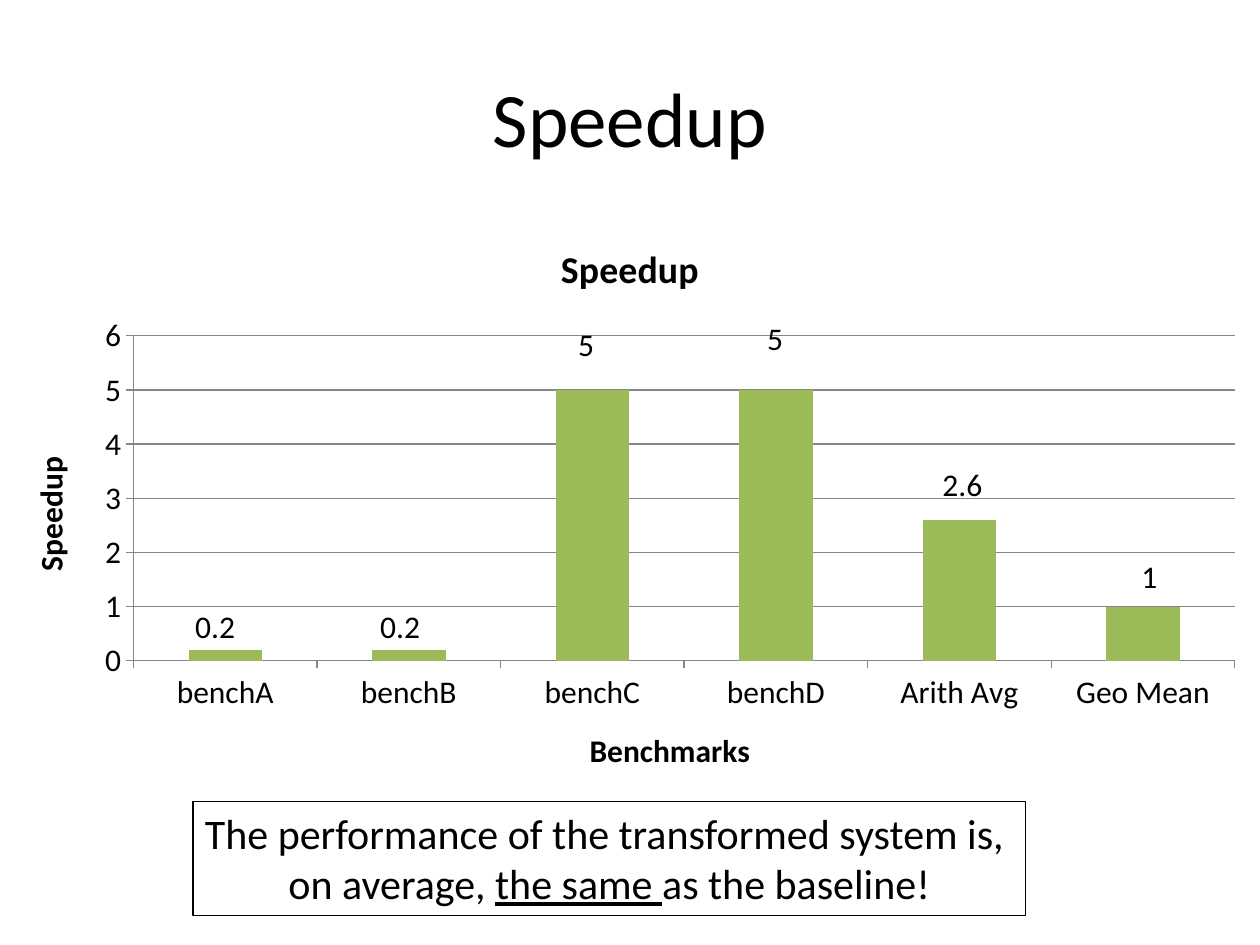
from lxml import etree
from pptx import Presentation
from pptx.chart.data import CategoryChartData
from pptx.dml.color import RGBColor
from pptx.enum.chart import XL_CHART_TYPE as ChartType, XL_TICK_MARK as TickMark
from pptx.enum.shapes import MSO_SHAPE as Shape
from pptx.enum.text import MSO_ANCHOR as Anchor, PP_ALIGN as Align
from pptx.oxml.ns import qn
from pptx.util import Pt

FONT = "Calibri"
COLORS = {"text": "000000", "paper": "FFFFFF", "bar": "9BBB59", "axis": "868686"}
SPEEDUPS = {"benchA": 0.2, "benchB": 0.2, "benchC": 5, "benchD": 5,
            "Arith Avg": 2.6, "Geo Mean": 1}
LABEL_PLACES = [(104.4, 343.4), (210.2, 343.4), (323.3, 182.2),
                (431.3, 178.6), (531.4, 262.1), (645.1, 314.6)]
PLOT_AREA = {"x": 0.106, "y": 0.204, "w": 0.874, "h": 0.556}


def color(name):
    return RGBColor.from_string(COLORS[name])


def style_font(font, size, bold=False):
    font.name, font.size, font.bold = FONT, Pt(size), bold
    font.color.rgb = color("text")


def write(shape, *lines, size=18, align=Align.LEFT, anchor=Anchor.TOP, wrap=False):
    """Fill a shape with lines, each a list of (text, underlined) runs."""
    frame = shape.text_frame
    frame.word_wrap, frame.vertical_anchor = wrap, anchor
    for index, line in enumerate(lines):
        paragraph = frame.add_paragraph() if index else frame.paragraphs[0]
        paragraph.alignment = align
        for text, underlined in line:
            run = paragraph.add_run()
            run.text = text
            style_font(run.font, size)
            run.font.underline = underlined


def add_text(slide, text, left, top, width, height, **text_format):
    box = slide.shapes.add_textbox(Pt(left), Pt(top), Pt(width), Pt(height))
    write(box, [(text, False)], **text_format)


def set_title(owner, text, size):
    """Title a chart or an axis."""
    frame = (owner.chart_title if hasattr(owner, "chart_title") else owner.axis_title).text_frame
    frame.text = text
    style_font(frame.paragraphs[0].runs[0].font, size, bold=True)


def style_line(line):
    line.color.rgb = color("axis")
    line.width = Pt(0.75)


def place_plot(chart):
    """Fix the inner plot area as fractions of the chart."""
    plot_area = chart.element.find(f".//{qn('c:plotArea')}")
    for old_layout in plot_area.findall(qn("c:layout")):
        plot_area.remove(old_layout)
    layout = etree.Element(qn("c:layout"))
    manual = etree.SubElement(layout, qn("c:manualLayout"))
    settings = {"layoutTarget": "inner", "xMode": "edge", "yMode": "edge", **PLOT_AREA}
    for name, value in settings.items():
        etree.SubElement(manual, qn(f"c:{name}")).set("val", str(value))
    plot_area.insert(0, layout)


def add_speedup_chart(slide):
    data = CategoryChartData()
    data.categories = list(SPEEDUPS)
    data.add_series("Speedup", list(SPEEDUPS.values()))
    chart = slide.shapes.add_chart(
        ChartType.COLUMN_CLUSTERED, Pt(0), Pt(123.8), Pt(720), Pt(334), data).chart
    style_font(chart.font, 18)
    chart.has_legend = False
    set_title(chart, "Speedup", 21.6)
    plot = chart.plots[0]
    plot.gap_width, plot.vary_by_categories = 150, False
    fill = plot.series[0].format.fill
    fill.solid()
    fill.fore_color.rgb = color("bar")

    for axis, title in ((chart.category_axis, "Benchmarks"), (chart.value_axis, "Speedup")):
        set_title(axis, title, 18)
        axis.major_tick_mark, axis.minor_tick_mark = TickMark.OUTSIDE, TickMark.NONE
        style_line(axis.format.line)
    value_axis = chart.value_axis
    value_axis.minimum_scale, value_axis.maximum_scale, value_axis.major_unit = 0, 6, 1
    style_line(value_axis.major_gridlines.format.line)
    place_plot(chart)


def add_conclusion(slide):
    box = slide.shapes.add_shape(Shape.RECTANGLE, Pt(110.2), Pt(457.9), Pt(475.9), Pt(65.4))
    box.shadow.inherit = False
    box.fill.solid()
    box.fill.fore_color.rgb = color("paper")
    box.line.color.rgb = color("text")
    box.line.width = Pt(0.75)
    write(box, [("The performance of the transformed system is, ", False)],
          [("on average, ", False), ("the same ", True), ("as the baseline!", False)],
          size=24, align=Align.CENTER)


def main():
    presentation = Presentation()
    presentation.slide_width, presentation.slide_height = Pt(720), Pt(540)
    slide = presentation.slides.add_slide(presentation.slide_layouts[6])
    add_text(slide, "Speedup", 36, 21.6, 648, 90, size=44,
             align=Align.CENTER, anchor=Anchor.MIDDLE, wrap=True)
    add_speedup_chart(slide)
    add_conclusion(slide)
    for value, (left, top) in zip(SPEEDUPS.values(), LABEL_PLACES):
        label = str(value)
        add_text(slide, label, left, top, 23.8 if len(label) == 1 else 37.4, 28.8)
    presentation.save("out.pptx")


if __name__ == "__main__":
    main()
